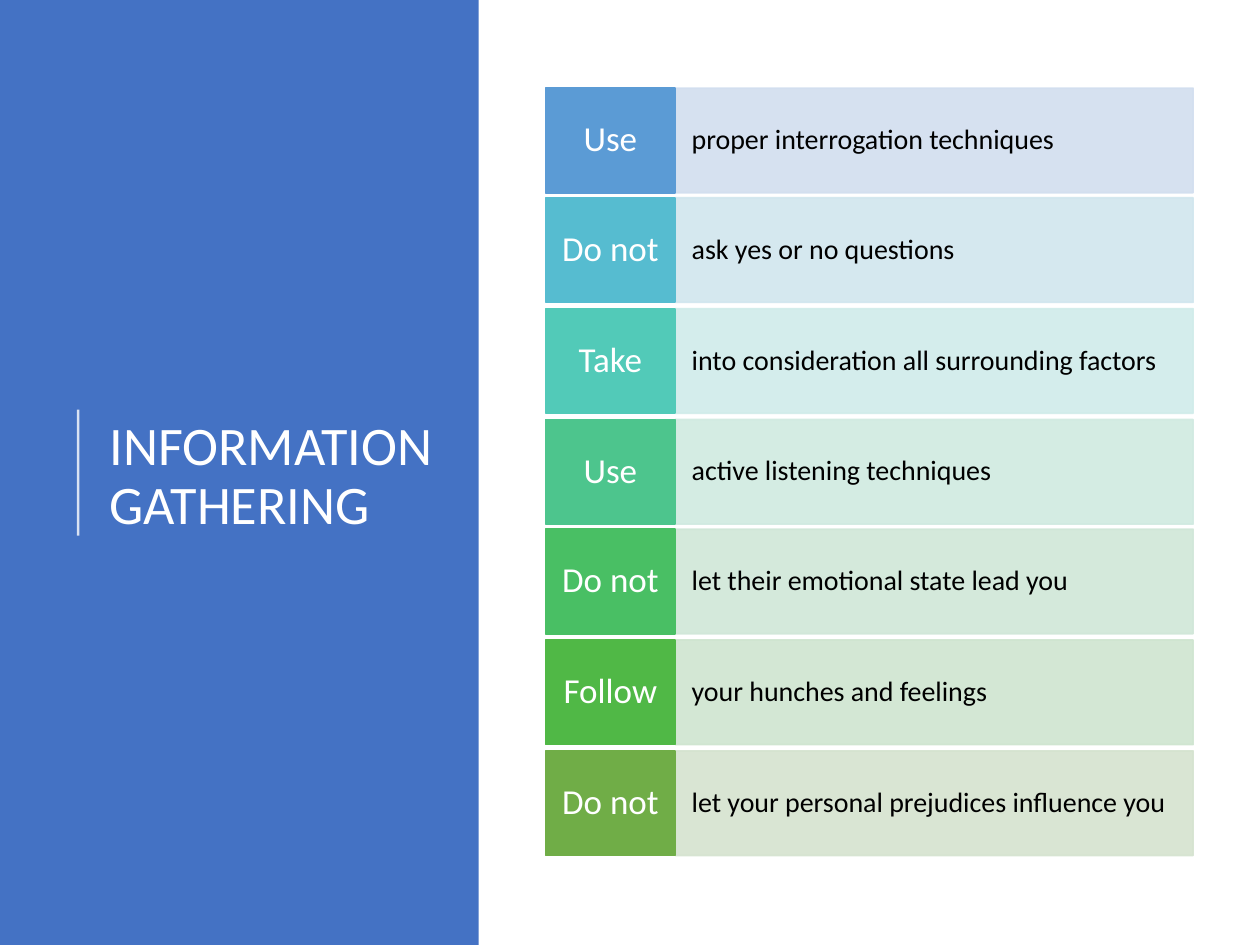
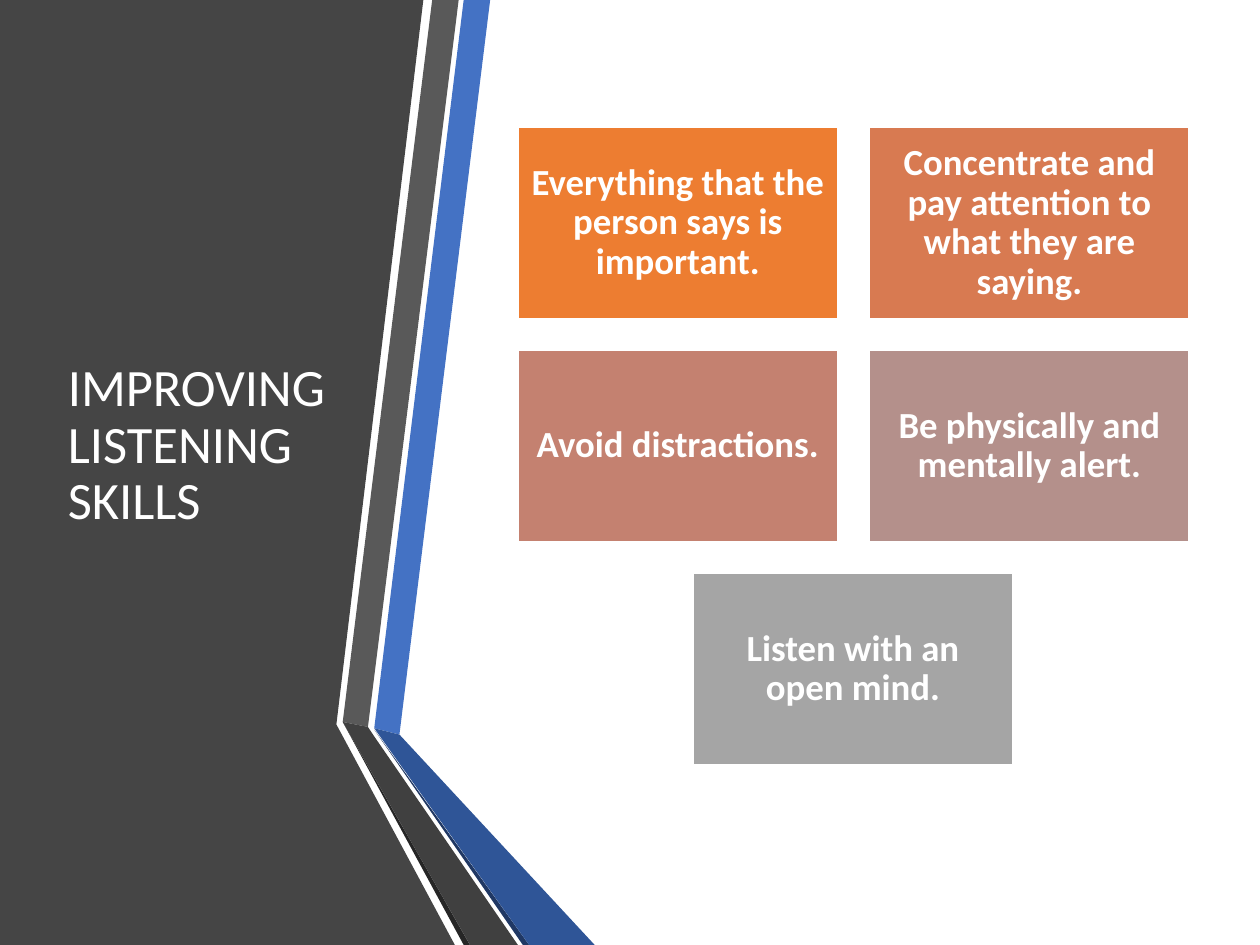
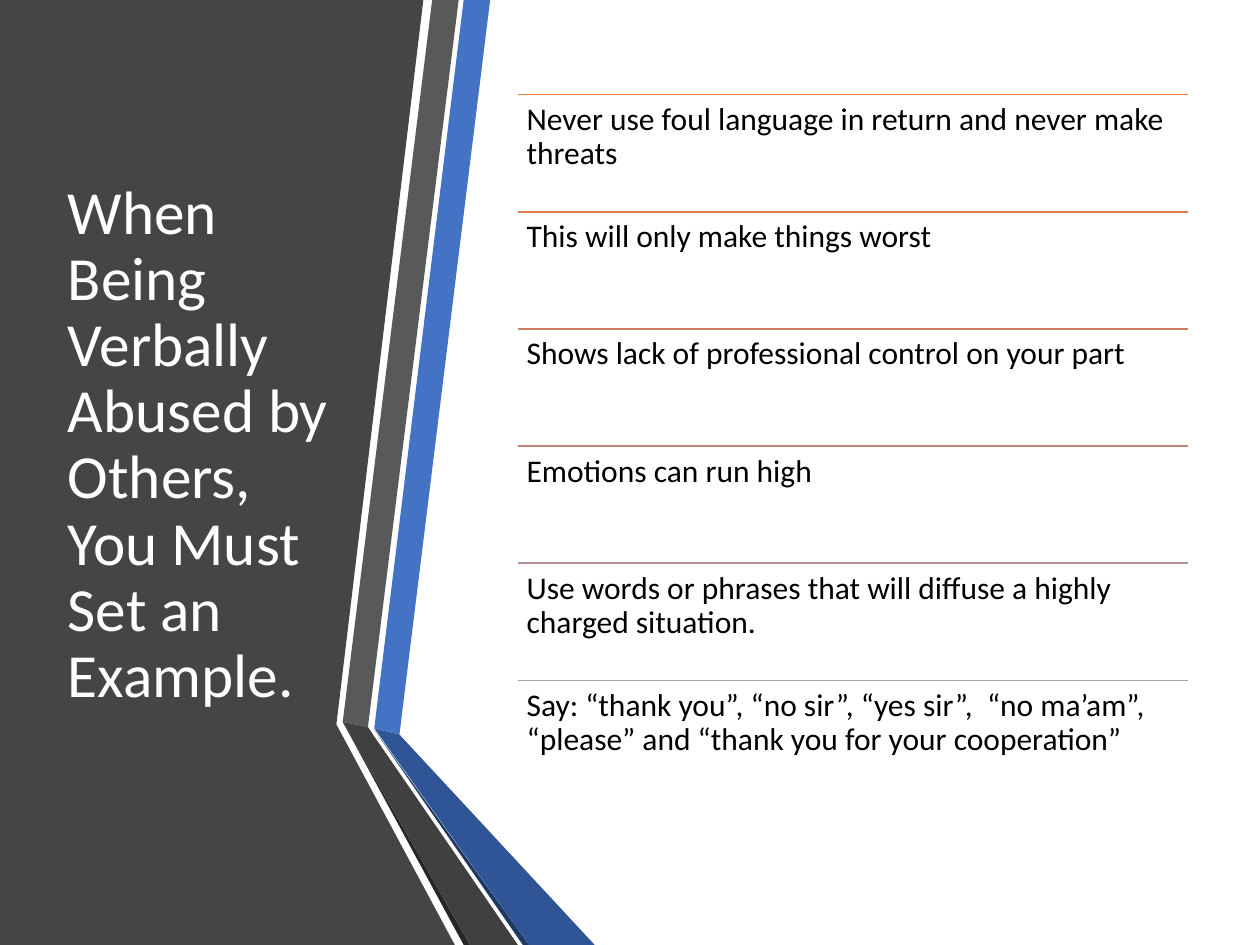
"""Build three training slides on interviewing and listening skills."""
from lxml import etree
from pptx import Presentation
from pptx.dml.color import RGBColor
from pptx.enum.shapes import MSO_CONNECTOR, MSO_SHAPE
from pptx.enum.text import MSO_ANCHOR, PP_ALIGN
from pptx.oxml.ns import qn
from pptx.util import Pt

PX = 9144
FONT = "Calibri"
LEFT, CENTER = PP_ALIGN.LEFT, PP_ALIGN.CENTER
TOP, MIDDLE = MSO_ANCHOR.TOP, MSO_ANCHOR.MIDDLE
RECTANGLE, STRAIGHT = MSO_SHAPE.RECTANGLE, MSO_CONNECTOR.STRAIGHT

WHITE = RGBColor(0xFF, 0xFF, 0xFF)
BLACK = RGBColor(0x00, 0x00, 0x00)
BLUE = RGBColor(0x44, 0x72, 0xC4)
DEEP_BLUE = RGBColor(0x2F, 0x55, 0x97)
NAVY = RGBColor(0x20, 0x38, 0x64)
CHARCOAL = RGBColor(0x45, 0x45, 0x45)
GRAY = RGBColor(0x59, 0x59, 0x59)
DARK_GRAY = RGBColor(0x40, 0x40, 0x40)
SHADE_GRAY = RGBColor(0x26, 0x26, 0x26)
ORANGE = RGBColor(0xED, 0x7D, 0x31)
SILVER = RGBColor(0xA5, 0xA5, 0xA5)


def paint(shape, fill, line=None, opacity=100):
    shape.shadow.inherit = False
    shape.fill.solid()
    shape.fill.fore_color.rgb = fill
    if line is None:
        shape.line.fill.background()
    else:
        shape.line.color.rgb = line
        shape.line.width = Pt(1)
    if opacity < 100:
        for color in shape._element.spPr.iter(qn("a:srgbClr")):
            etree.SubElement(color, qn("a:alpha"), val=str(opacity * 1000))


def write(shape, text, size, color, margins, align=LEFT, anchor=MIDDLE, bold=False):
    frame = shape.text_frame
    frame.word_wrap = True
    frame.vertical_anchor = anchor
    frame.margin_left = frame.margin_right = margins[0] * PX
    frame.margin_top = frame.margin_bottom = margins[1] * PX
    paragraph = frame.paragraphs[0]
    paragraph.text = text
    paragraph.alignment = align
    paragraph.line_spacing = 0.9
    paragraph.font.name = FONT
    paragraph.font.size = Pt(size)
    paragraph.font.bold = bold
    paragraph.font.color.rgb = color


presentation = Presentation()
presentation.slide_width = 1000 * PX
presentation.slide_height = 750 * PX
blank = presentation.slide_layouts[6]
gathering, listening, example = [presentation.slides.add_slide(blank) for _ in range(3)]

side_panel = gathering.shapes.add_shape(RECTANGLE, 0, 0, 380 * PX, 750 * PX)
paint(side_panel, BLUE)

RIBBON = [
    (CHARCOAL, [(0, 0), (336, 0), (267, 575), (361, 750), (0, 750)]),
    (BLUE, [(297, 578), (317, 583), (389, 0), (368, 0)]),
    (GRAY, [(364, 0), (343, 0), (272, 573), (292, 577)]),
    (SHADE_GRAY, [(272, 573), (368, 750), (373, 750)]),
    (NAVY, [(297, 579), (415, 750), (420, 750)]),
    (DEEP_BLUE, [(297, 578), (420, 750), (472, 750), (317, 583)]),
    (DARK_GRAY, [(411, 750), (296, 583), (292, 577), (272, 573), (373, 750)]),
]
for slide in (listening, example):
    for color, points in RIBBON:
        builder = slide.shapes.build_freeform(*points[0], scale=PX)
        builder.add_line_segments(points[1:], close=True)
        paint(builder.convert_to_shape(), color)

TITLES = [
    (gathering, "INFORMATION GATHERING", 31, (77, 78, 276, 602)),
    (listening, "IMPROVING LISTENING SKILLS", 30, (44, 75, 228, 558)),
    (example, "When Being Verbally Abused by Others, You Must Set an Example.", 35,
     (44, 75, 228, 558)),
]
for slide, text, size, box in TITLES:
    title = slide.shapes.add_textbox(*[length * PX for length in box])
    write(title, text, size, WHITE, (10, 5))

GUIDELINES = [
    ("Use", "proper interrogation techniques",
     RGBColor(0x5B, 0x9B, 0xD5), RGBColor(0xD2, 0xDE, 0xEF)),
    ("Do not", "ask yes or no questions",
     RGBColor(0x56, 0xBC, 0xD0), RGBColor(0xD1, 0xE6, 0xEE)),
    ("Take", "into consideration all surrounding factors",
     RGBColor(0x52, 0xCA, 0xB8), RGBColor(0xD0, 0xEC, 0xEA)),
    ("Use", "active listening techniques",
     RGBColor(0x4D, 0xC5, 0x8D), RGBColor(0xD0, 0xEA, 0xE1)),
    ("Do not", "let their emotional state lead you",
     RGBColor(0x49, 0xBF, 0x64), RGBColor(0xD0, 0xE7, 0xD8)),
    ("Follow", "your hunches and feelings",
     RGBColor(0x50, 0xB8, 0x46), RGBColor(0xCF, 0xE5, 0xD0)),
    ("Do not", "let your personal prejudices influence you",
     RGBColor(0x70, 0xAD, 0x47), RGBColor(0xD5, 0xE3, 0xCF)),
]
for row, (verb, advice, strong, pale) in enumerate(GUIDELINES):
    top = (70 + row * 526 // 6) * PX
    advice_cell = gathering.shapes.add_shape(RECTANGLE, 536 * PX, top, 411 * PX, 83 * PX)
    paint(advice_cell, pale, pale, opacity=90)
    write(advice_cell, advice, 16, BLACK, (13, 21))
    verb_cell = gathering.shapes.add_shape(RECTANGLE, 433 * PX, top, 103 * PX, 83 * PX)
    paint(verb_cell, strong, strong)
    write(verb_cell, verb, 20, WHITE, (5, 8), CENTER)

SKILLS = [
    ("Everything that the person says is important.", ORANGE),
    ("Concentrate and pay attention to what they are saying.", RGBColor(0xD8, 0x7A, 0x51)),
    ("Avoid distractions.", RGBColor(0xC4, 0x81, 0x70)),
    ("Be physically and mentally alert.", RGBColor(0xB4, 0x90, 0x8B)),
    ("Listen with an open mind.", SILVER),
]
for index, (skill, color) in enumerate(SKILLS):
    row, column = divmod(index, 2)
    left = 550 if index == len(SKILLS) - 1 else 411 + column * 279
    top = 101 + row * 177
    card = listening.shapes.add_shape(RECTANGLE, left * PX, top * PX, 254 * PX, 152 * PX)
    paint(card, color, WHITE)
    write(card, skill, 21, WHITE, (9, 9), CENTER, bold=True)

EXAMPLES = [
    ("Never use foul language in return and never make threats", ORANGE),
    ("This will only make things worst", RGBColor(0xDC, 0x7A, 0x4B)),
    ("Shows lack of professional control on your part", RGBColor(0xCC, 0x7D, 0x64)),
    ("Emotions can run high", RGBColor(0xBD, 0x86, 0x7B)),
    ("Use words or phrases that will diffuse a highly charged situation.",
     RGBColor(0xB0, 0x93, 0x91)),
    ("Say: “thank you”, “no sir”, “yes sir”,  “no ma’am”, “please” and "
     "“thank you for your cooperation”", SILVER),
]
rules = [(gathering, (62, 425, 62, 325), WHITE, 1.5, 80)]
for row, (text, color) in enumerate(EXAMPLES):
    top = 75 + row * 93
    rules.append((example, (411, top, 943, top), color, 1, 100))
    entry = example.shapes.add_textbox(411 * PX, top * PX, 533 * PX, 93 * PX)
    write(entry, text, 18, BLACK, (7, 7), anchor=TOP)

for slide, ends, color, width, opacity in rules:
    rule = slide.shapes.add_connector(STRAIGHT, *[length * PX for length in ends])
    rule.line.color.rgb = color
    rule.line.width = Pt(width)
    properties = rule._element.spPr
    etree.SubElement(properties, qn("a:effectLst"))
    if opacity < 100:
        line_color = next(properties.iter(qn("a:srgbClr")))
        etree.SubElement(line_color, qn("a:alpha"), val=str(opacity * 1000))

presentation.save("out.pptx")
